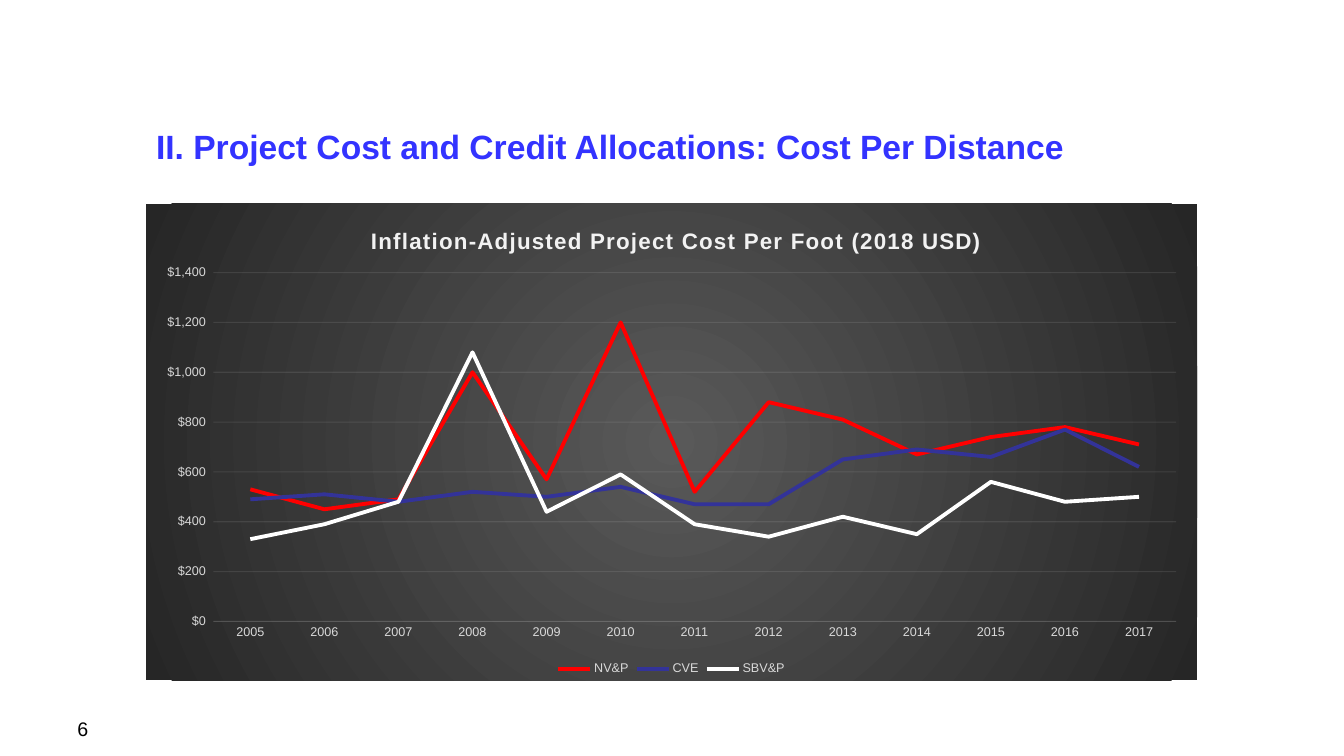
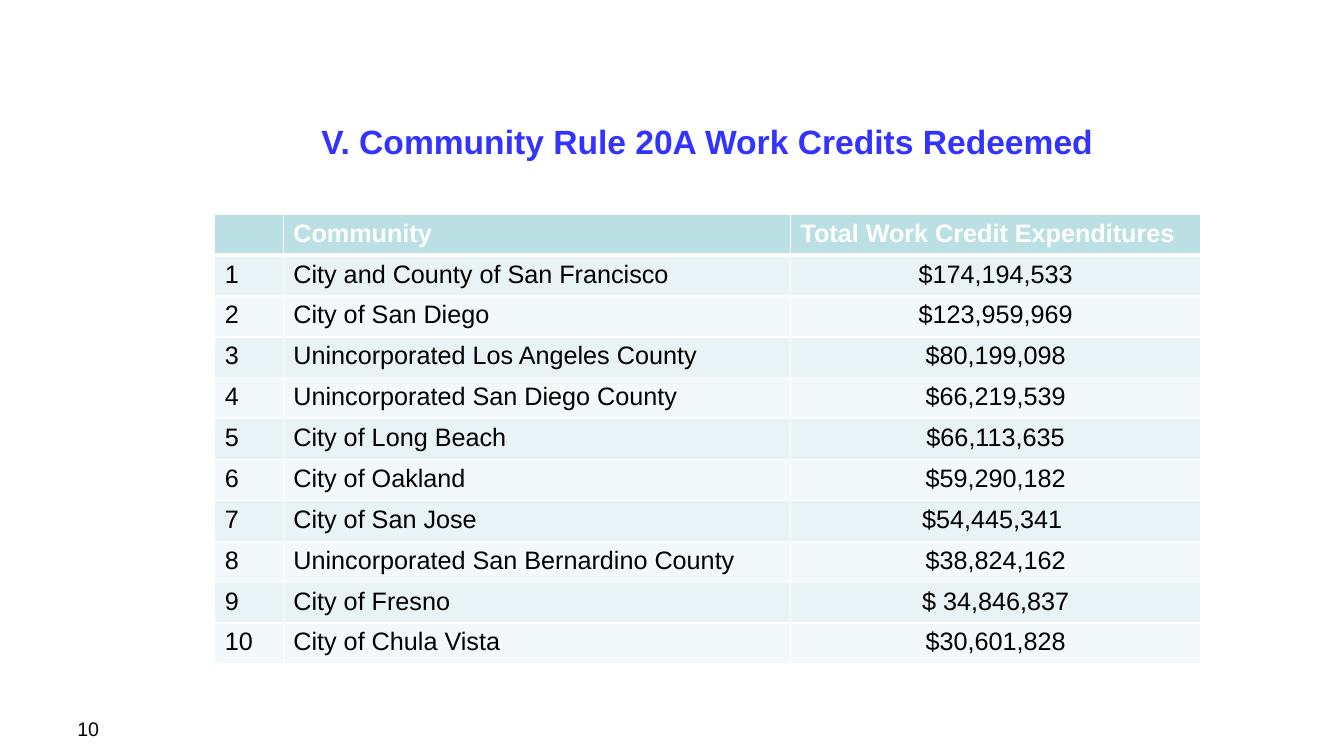
"""Build two slides on undergrounding project costs and work credits."""
from lxml.etree import SubElement
from pptx import Presentation
from pptx.chart.data import CategoryChartData
from pptx.dml.color import RGBColor
from pptx.enum.chart import XL_CHART_TYPE, XL_LEGEND_POSITION, XL_TICK_MARK
from pptx.enum.text import MSO_ANCHOR, PP_ALIGN
from pptx.oxml import parse_xml
from pptx.oxml.ns import nsdecls, qn
from pptx.util import Cm, Pt

FONT = "Arial"
COLORS = {
    "title": "3333FF", "text": "000000", "white": "FFFFFF",
    "header": "BBE0E3", "odd": "E7F3F4", "even": "F3F9FA",
    "chart_center": "595959", "chart_edge": "262626",
    "chart_text": "D9D9D9", "chart_title": "F2F2F2", "grid": "F2F2F2",
    "red": "FF0000", "navy": "333399",
}

COST_TITLE = "II. Project Cost and Credit Allocations: Cost Per Distance"
COST_CHART_TITLE = "Inflation-Adjusted Project Cost Per Foot (2018 USD)"
YEARS = [str(year) for year in range(2005, 2018)]
COST_PER_FOOT = [
    ("NV&P", "red", [530, 450, 490, 1000, 570, 1200, 520, 880, 810, 670, 740, 780, 710]),
    ("CVE", "navy", [490, 510, 480, 520, 500, 540, 470, 470, 650, 690, 660, 770, 620]),
    ("SBV&P", "white", [330, 390, 480, 1080, 440, 590, 390, 340, 420, 350, 560, 480, 500]),
]

CREDIT_TITLE = "V. Community Rule 20A Work Credits Redeemed"
CREDIT_HEADER = ("", "Community", "Total Work Credit Expenditures")
CREDITS = [
    ("City and County of San Francisco", "$174,194,533"),
    ("City of San Diego", "$123,959,969"),
    ("Unincorporated Los Angeles County", "$80,199,098"),
    ("Unincorporated San Diego County", "$66,219,539"),
    ("City of Long Beach", "$66,113,635"),
    ("City of Oakland", "$59,290,182"),
    ("City of San Jose", "$54,445,341 "),
    ("Unincorporated San Bernardino County", "$38,824,162"),
    ("City of Fresno", "$ 34,846,837"),
    ("City of Chula Vista", "$30,601,828"),
]
CREDIT_WIDTHS = (1.73, 12.78, 10.34)
ROW_HEIGHT, LAST_ROW_HEIGHT = 1.03, 0.98


def rgb(color):
    return RGBColor.from_string(COLORS[color])


def format_font(font, size, color, bold=False):
    font.name, font.size, font.bold = FONT, Pt(size), bold
    font.color.rgb = rgb(color)


def write(frame, text, size, color="text", bold=False, align=PP_ALIGN.LEFT):
    paragraph = frame.paragraphs[0]
    paragraph.alignment = align
    run = paragraph.add_run()
    run.text = text
    format_font(run.font, size, color, bold)
    return run


def add_slide(prs, title, box, number, align):
    slide = prs.slides.add_slide(prs.slide_layouts[5])
    heading = slide.shapes.title
    heading.left, heading.top, heading.width, heading.height = map(Cm, box)
    heading.text_frame.vertical_anchor = MSO_ANCHOR.MIDDLE
    write(heading.text_frame, title, 24, "title", True, align)
    page = slide.shapes.add_textbox(Cm(1.7), Cm(17.95), Cm(6.2), Cm(0.9))
    page.text_frame.word_wrap = True
    write(page.text_frame, str(number), 14)
    return slide


def place(element, inner=False, **fractions):
    """Give a chart part a fixed place, in fractions of the chart."""
    layout = element.find(qn("c:layout"))
    if layout is None:
        layout = parse_xml(f"<c:layout {nsdecls('c')}/>")
        element.insert(0, layout)
    manual = SubElement(layout, qn("c:manualLayout"))
    settings = {"layoutTarget": "inner"} if inner else {}
    settings.update(xMode="edge", yMode="edge", **fractions)
    for tag, value in settings.items():
        SubElement(manual, qn(f"c:{tag}")).set("val", str(value))


def faint_line(line):
    line.width = Pt(0.75)
    line.color.rgb = rgb("grid")
    for color in line.fill._xPr.iter(qn("a:srgbClr")):
        SubElement(color, qn("a:alpha")).set("val", "10000")


def radial_fill(chart):
    stops = "".join(
        f'<a:gs pos="{position}"><a:srgbClr val="{COLORS[color]}"/></a:gs>'
        for position, color in ((0, "chart_center"), (100000, "chart_edge")))
    chart.element.find(qn("c:chart")).addnext(parse_xml(
        f'<c:spPr {nsdecls("c", "a")}><a:gradFill><a:gsLst>{stops}</a:gsLst>'
        '<a:path path="circle"><a:fillToRect l="50000" t="50000" r="50000" b="50000"/>'
        '</a:path></a:gradFill><a:ln><a:noFill/></a:ln></c:spPr>'))


def add_cost_chart(slide):
    data = CategoryChartData()
    data.categories = YEARS
    for name, _, costs in COST_PER_FOOT:
        data.add_series(name, costs)
    chart = slide.shapes.add_chart(
        XL_CHART_TYPE.LINE, Cm(3.68), Cm(5.13), Cm(26.49), Cm(12.01), data).chart
    format_font(chart.font, 10, "chart_text")
    radial_fill(chart)

    chart.has_title = True
    title_run = write(chart.chart_title.text_frame, COST_CHART_TITLE, 16,
                      "chart_title", True, PP_ALIGN.CENTER)
    title_run.font._element.set("spc", "100")
    place(chart.chart_title._element, x=0.21, y=0.04)
    place(chart.element.find(".//" + qn("c:plotArea")), inner=True,
          x=0.064, y=0.145, w=0.916, h=0.732)

    chart.has_legend = True
    chart.legend.position = XL_LEGEND_POSITION.BOTTOM
    chart.legend.include_in_layout = False
    format_font(chart.legend.font, 9, "chart_text")

    years, dollars = chart.category_axis, chart.value_axis
    for axis in (years, dollars):
        axis.major_tick_mark = axis.minor_tick_mark = XL_TICK_MARK.NONE
        format_font(axis.tick_labels.font, 9, "chart_text")
    faint_line(years.format.line)
    dollars.minimum_scale, dollars.maximum_scale, dollars.major_unit = 0, 1400, 200
    dollars.format.line.fill.background()
    faint_line(dollars.major_gridlines.format.line)
    dollars.tick_labels.number_format = '"$"#,##0_);[Red]\\("$"#,##0\\)'
    dollars.tick_labels.number_format_is_linked = False

    plot = chart.plots[0]
    plot.vary_by_categories = False
    for series, (_, color, _) in zip(plot.series, COST_PER_FOOT):
        series.smooth = False
        series.format.line.width = Pt(2.75)
        series.format.line.color.rgb = rgb(color)


def add_borders(cell, top, bottom):
    properties = cell._tc.get_or_add_tcPr()
    for index, (side, width) in enumerate(zip("LRTB", (1, 1, top, bottom))):
        properties.insert(index, parse_xml(
            f'<a:ln{side} {nsdecls("a")} w="{Pt(width)}"><a:solidFill>'
            f'<a:srgbClr val="{COLORS["white"]}"/></a:solidFill></a:ln{side}>'))


def add_credit_table(slide):
    rows = [CREDIT_HEADER] + [
        (str(rank), *credit) for rank, credit in enumerate(CREDITS, 1)]
    heights = [ROW_HEIGHT] * (len(rows) - 1) + [LAST_ROW_HEIGHT]
    table = slide.shapes.add_table(
        len(rows), len(CREDIT_WIDTHS), Cm(5.41), Cm(5.4),
        Cm(sum(CREDIT_WIDTHS)), Cm(sum(heights))).table
    table.horz_banding = False
    for column, width in zip(table.columns, CREDIT_WIDTHS):
        column.width = Cm(width)
    for r, (texts, height) in enumerate(zip(rows, heights)):
        table.rows[r].height = Cm(height)
        is_header = r == 0
        fill = "header" if is_header else "odd" if r % 2 else "even"
        for c, text in enumerate(texts):
            cell = table.cell(r, c)
            cell.fill.solid()
            cell.fill.fore_color.rgb = rgb(fill)
            add_borders(cell, 3 if r == 1 else 1, 3 if is_header else 1)
            centered = c == 2 and not is_header
            write(cell.text_frame, text, 18, "white" if is_header else "text",
                  is_header, PP_ALIGN.CENTER if centered else PP_ALIGN.LEFT)


def main():
    prs = Presentation()
    prs.slide_width, prs.slide_height = Cm(33.87), Cm(19.05)
    add_cost_chart(add_slide(
        prs, COST_TITLE, (3.68, 2.74, 26.49, 1.9), 6, PP_ALIGN.LEFT))
    add_credit_table(add_slide(
        prs, CREDIT_TITLE, (3.89, 2.6, 27.86, 1.9), 10, PP_ALIGN.CENTER))
    prs.save("out.pptx")


if __name__ == "__main__":
    main()
